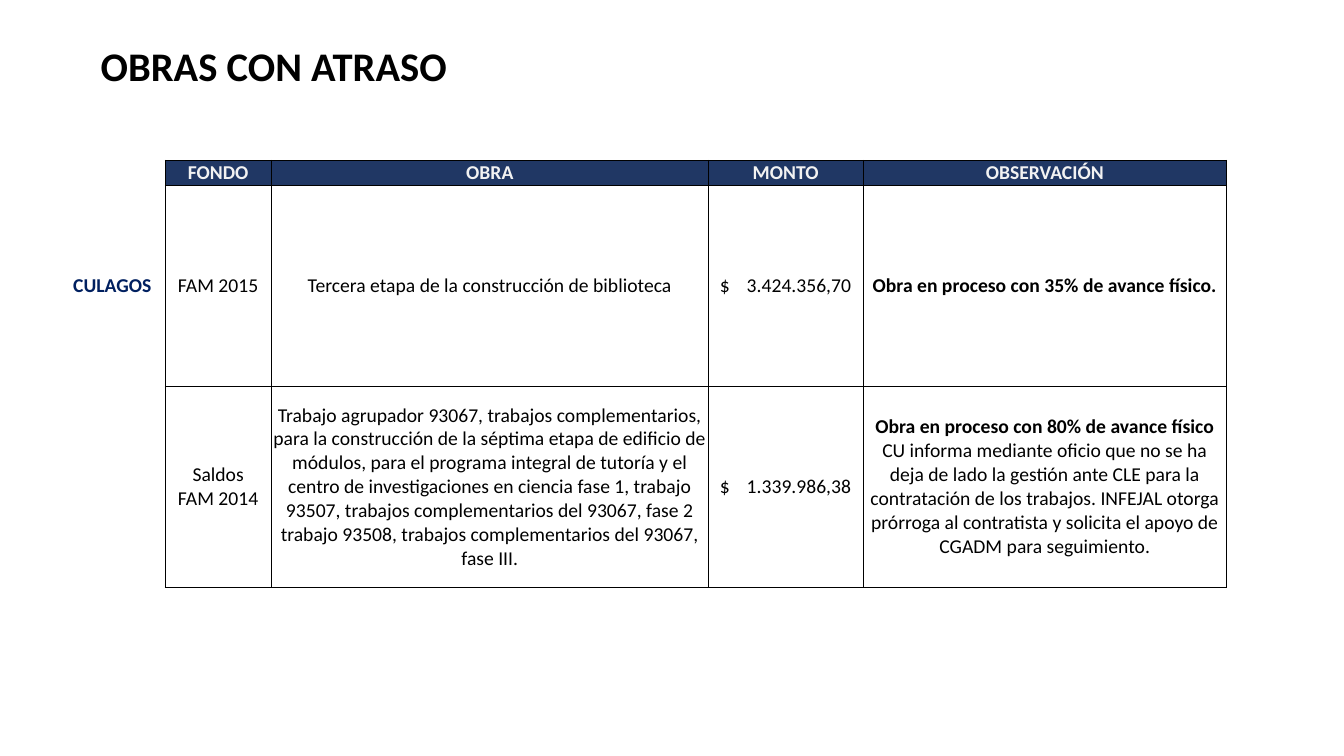
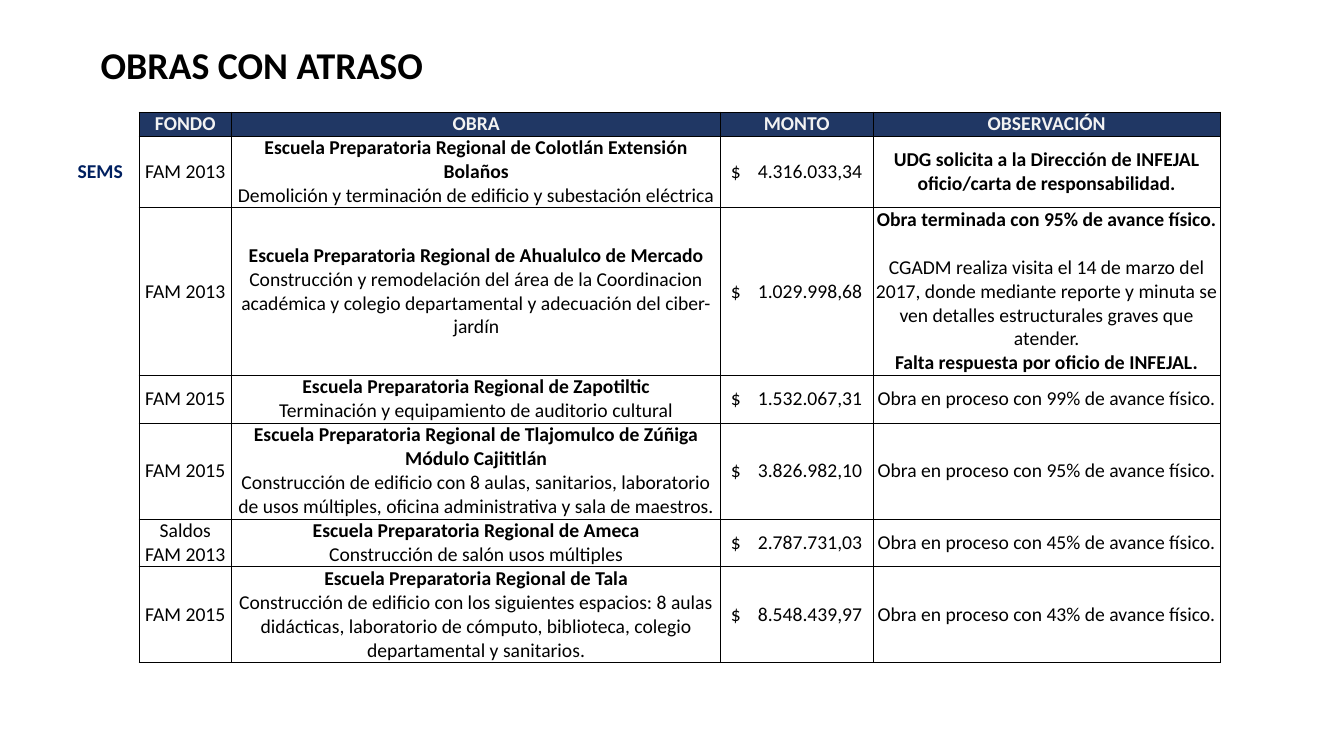
from lxml.etree import SubElement as Sub
from pptx import Presentation
from pptx.dml.color import RGBColor as RGB
from pptx.enum.text import MSO_ANCHOR as Anchor, PP_ALIGN as Align
from pptx.oxml.ns import qn
from pptx.util import Pt

COLORS = {"ink": "000000", "paper": "FFFFFF", "navy": "203764",
          "label": "002060", "pale": "F2F2F2"}
FONT = "Calibri"
SIZE = 14
LINE = 17.1      # height of one line of table text
PAD = 0.7        # side margin of a cell
SUM = 94         # width of an amount, from "$" to the last digit
TAB = 19.2       # from "$" to the first digit
HEADS = ["FONDO", "OBRA", "MONTO", "OBSERVACIÓN"]
PLAIN = "{2D5ABB26-0587-4C30-8999-92F81FD0307C}"  # no style, no grid


def add_run(para, text, size, color, bold):
    run = para.add_run()
    run.text = text
    font = run.font
    font.name, font.size, font.bold = FONT, Pt(size), bold
    font.color.rgb = RGB.from_string(COLORS[color])


def add_title(slide, text, size):
    box = slide.shapes.add_textbox(Pt(64.8), Pt(26), Pt(572), Pt(size * 1.22 + 7.2))
    box.text_frame.word_wrap = True
    add_run(box.text_frame.paragraphs[0], text, size, "ink", True)


def set_edges(cell):
    props = cell._tc.get_or_add_tcPr()
    for side in "LRTB":
        edge = Sub(props, qn(f"a:ln{side}"), w=str(Pt(0.5)))
        Sub(Sub(edge, qn("a:solidFill")), qn("a:srgbClr"), val=COLORS["ink"])


def fill_cell(cell, lines, color="ink", back=None, bold=False):
    """Each line is a paragraph: '*' makes it bold, '^' leaves a line's gap above."""
    cell.margin_left = cell.margin_right = Pt(PAD)
    cell.margin_top = cell.margin_bottom = 0
    cell.vertical_anchor = Anchor.MIDDLE
    if back:
        set_edges(cell)
        cell.fill.solid()
        cell.fill.fore_color.rgb = RGB.from_string(COLORS[back])
    else:
        cell.fill.background()
    frame = cell.text_frame
    for i, line in enumerate(lines):
        para = frame.add_paragraph() if i else frame.paragraphs[0]
        para.alignment = Align.CENTER
        if line.startswith("^"):
            para.space_before = Pt(LINE)
        add_run(para, line.lstrip("^*"), SIZE, color, bold or line.startswith("*"))
    if not lines:
        Sub(frame.paragraphs[0]._p, qn("a:endParaRPr"), sz=str(SIZE * 100))


def fill_sum(cell, amount, width):
    # Sign and digits are parted by a tab, and centred as one block
    fill_cell(cell, [f"$\t{amount}"], back="paper")
    cell.margin_left = Pt((width - SUM) / 2)
    para = cell.text_frame.paragraphs[0]
    para.alignment = Align.LEFT
    tabs = Sub(para._p.get_or_add_pPr(), qn("a:tabLst"))
    Sub(tabs, qn("a:tab"), pos=str(Pt(TAB)), algn="l")


def add_works(slide, left, top, widths, heights, label, works, first=0):
    """Table of works with a label column and a blank column at its sides;
    first is the index of the header row."""
    table = slide.shapes.add_table(len(heights), len(widths), Pt(left), Pt(top),
                                   Pt(sum(widths)), Pt(sum(heights))).table
    table.first_row = table.horz_banding = False
    table._tbl.tblPr.find(qn("a:tableStyleId")).text = PLAIN
    for col, width in zip(table.columns, widths):
        col.width = Pt(width)
    for row, height in zip(table.rows, heights):
        row.height = Pt(height)

    last = len(widths) - 1
    for r in range(len(heights)):
        item = r - first - 1
        for c in range(len(widths)):
            cell = table.cell(r, c)
            if c == 0 and item == 0:
                fill_cell(cell, [label], "label", bold=True)
            elif c in (0, last) or not -1 <= item < len(works):
                fill_cell(cell, [])
            elif item == -1:
                fill_cell(cell, [HEADS[c - 1]], "pale", "navy", True)
            elif c == 3:
                fill_sum(cell, works[item][2], widths[c])
            else:
                fill_cell(cell, works[item][c - 1], back="paper")


CAMPUS = [
    (["FAM 2015"], ["Tercera etapa de la construcción de biblioteca"],
     "3.424.356,70", ["*Obra en proceso con 35% de avance físico."]),
    (["Saldos", "FAM 2014"],
     ["Trabajo agrupador 93067, trabajos complementarios, para la construcción "
      "de la séptima etapa de edificio de módulos, para el programa integral de "
      "tutoría y el centro de investigaciones en ciencia fase 1, trabajo 93507, "
      "trabajos complementarios del 93067, fase 2 trabajo 93508, trabajos "
      "complementarios del 93067, fase III."],
     "1.339.986,38",
     ["*Obra en proceso con 80% de avance físico",
      "CU informa mediante oficio que no se ha deja de lado la gestión ante CLE "
      "para la contratación de los trabajos. INFEJAL otorga prórroga al "
      "contratista y solicita el apoyo de CGADM para seguimiento."]),
]

SCHOOLS = [
    (["FAM 2013"],
     ["*Escuela Preparatoria Regional de Colotlán Extensión Bolaños",
      "Demolición y terminación de edificio y subestación eléctrica"],
     "4.316.033,34",
     ["*UDG solicita a la Dirección de INFEJAL oficio/carta de responsabilidad."]),
    (["FAM 2013"],
     ["*Escuela Preparatoria Regional de Ahualulco de Mercado",
      "Construcción y remodelación del área de la Coordinacion académica y "
      "colegio departamental y adecuación del ciber-jardín"],
     "1.029.998,68",
     ["*Obra terminada con 95% de avance físico.",
      "^CGADM realiza visita el 14 de marzo del 2017, donde mediante reporte y "
      "minuta se ven detalles estructurales graves que atender.",
      "*Falta respuesta por oficio de INFEJAL."]),
    (["FAM 2015"],
     ["*Escuela Preparatoria Regional de Zapotiltic",
      "Terminación y equipamiento de auditorio cultural"],
     "1.532.067,31", ["Obra en proceso con 99% de avance físico."]),
    (["FAM 2015"],
     ["*Escuela Preparatoria Regional de Tlajomulco de Zúñiga Módulo Cajititlán",
      "Construcción de edificio con 8 aulas, sanitarios, laboratorio de usos "
      "múltiples, oficina administrativa y sala de maestros."],
     "3.826.982,10", ["Obra en proceso con 95% de avance físico."]),
    (["Saldos", "FAM 2013"],
     ["*Escuela Preparatoria Regional de Ameca",
      "Construcción de salón usos múltiples"],
     "2.787.731,03", ["Obra en proceso con 45% de avance físico."]),
    (["FAM 2015"],
     ["*Escuela Preparatoria Regional de Tala",
      "Construcción de edificio con los siguientes espacios: 8 aulas didácticas, "
      "laboratorio de cómputo, biblioteca, colegio departamental y sanitarios."],
     "8.548.439,97", ["Obra en proceso con 43% de avance físico."]),
]


def main():
    deck = Presentation()
    deck.slide_width, deck.slide_height = Pt(960), Pt(540)
    blank = deck.slide_layouts[6]

    # Works of the campus, with a blank row above and below
    slide = deck.slides.add_slide(blank)
    add_title(slide, "OBRAS CON ATRASO", 29)
    add_works(slide, 42.5, 96.5, [75.6, 75.6, 312.5, 110.2, 260, 25.2],
              [18, 18, 143.5, 143.5, 18], "CULAGOS", CAMPUS, first=1)

    # Works of the schools, each row as high as its lines
    slide = deck.slides.add_slide(blank)
    add_title(slide, "OBRAS CON ATRASO", 27)
    add_works(slide, 44, 80, [55.2, 66.4, 349.2, 108.7, 248.4, 23],
              [LINE * n for n in (1, 3, 7, 2, 4, 2, 4)], "SEMS", SCHOOLS)

    deck.save("out.pptx")


if __name__ == "__main__":
    main()
